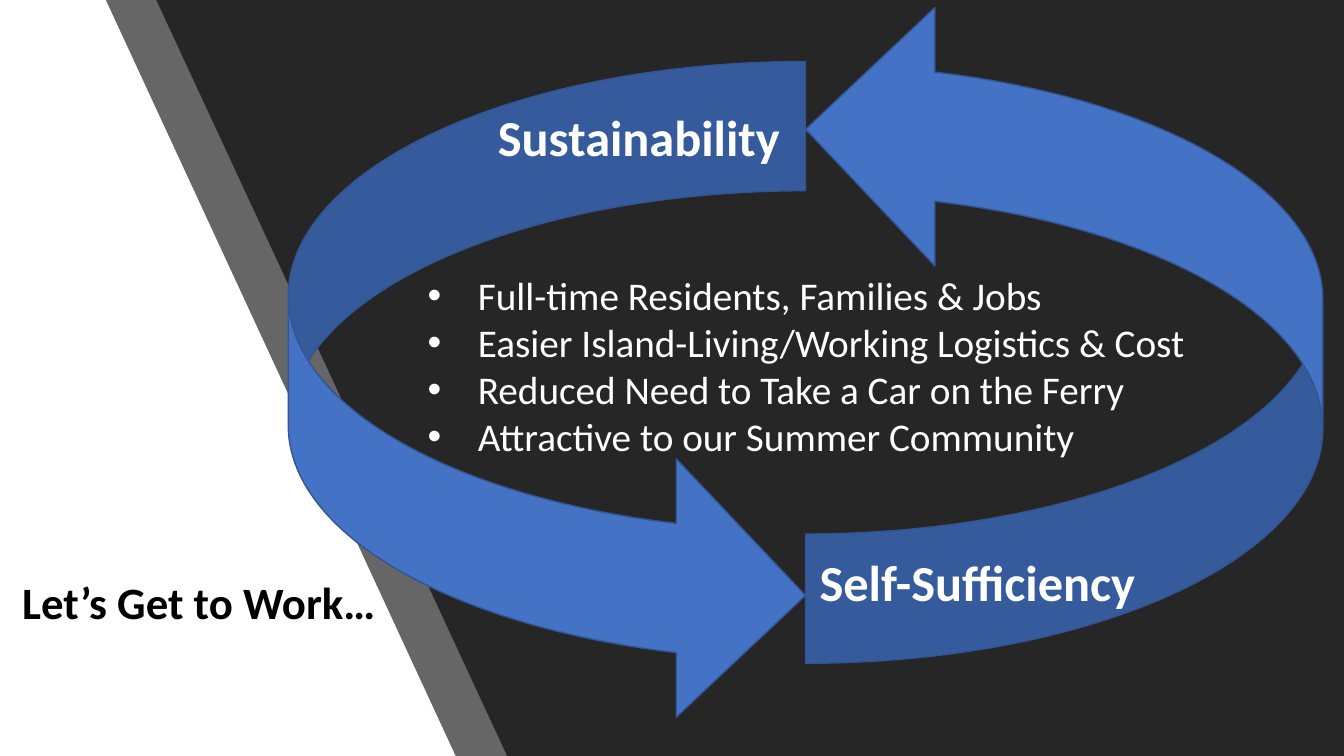
from lxml import etree
from pptx import Presentation
from pptx.dml.color import RGBColor
from pptx.enum.shapes import MSO_SHAPE
from pptx.enum.text import MSO_ANCHOR, MSO_AUTO_SIZE, PP_ALIGN
from pptx.oxml.ns import qn
from pptx.util import Inches, Pt

RECTANGLE = MSO_SHAPE.RECTANGLE
CURVED_ARROW = MSO_SHAPE.CURVED_RIGHT_ARROW
TOP = MSO_ANCHOR.TOP
LEFT = PP_ALIGN.LEFT
NO_AUTOFIT = MSO_AUTO_SIZE.NONE

WIDTH, HEIGHT = 13.33, 7.5
FONT = "Calibri"
BLACK, WHITE, DARK = "000000", "FFFFFF", "262626"
BLUE, BLUE_LINE = "4472C4", "325491"
BENEFITS = [
    "Full-time Residents, Families & Jobs",
    "Easier Island-Living/Working Logistics & Cost",
    "Reduced Need to Take a Car on the Ferry",
    "Attractive to our Summer Community",
]


def rgb(value):
    """Return the colour for a hex string."""
    return RGBColor.from_string(value)


def paint(sp, fill, line=None):
    """Give a shape a flat fill and an optional one-point outline."""
    sp.shadow.inherit = False
    sp.fill.solid()
    sp.fill.fore_color.rgb = rgb(fill)
    if line:
        sp.line.color.rgb = rgb(line)
        sp.line.width = Pt(1)
    else:
        sp.line.fill.background()


def place(sp, box):
    """Move a shape to a box of left, top, width and height in inches."""
    sp.left, sp.top, sp.width, sp.height = map(Inches, box)


def write(sp, lines, size, color, bold=False):
    """Fill a shape with left-aligned paragraphs in one style."""
    tf = sp.text_frame
    tf.text = "\n".join(lines)
    tf.word_wrap = True
    tf.auto_size = NO_AUTOFIT
    tf.vertical_anchor = TOP
    for p in tf.paragraphs:
        p.alignment = LEFT
        p.space_before = p.space_after = Pt(0)
        p.line_spacing = 1.0
        for r in p.runs:
            r.font.name = FONT
            r.font.size = Pt(size)
            r.font.bold = bold
            r.font.color.rgb = rgb(color)


def add_slanted_panel(s, top_left, bottom_left, alpha=100):
    """Add a dark panel with a slanted left edge, reaching the right side."""
    builder = s.shapes.build_freeform(Inches(WIDTH), Inches(HEIGHT))
    corners = [(bottom_left, HEIGHT), (top_left, 0), (WIDTH, 0)]
    builder.add_line_segments([(Inches(x), Inches(y)) for x, y in corners])
    sp = builder.convert_to_shape()
    paint(sp, DARK)
    if alpha < 100:
        color = sp.fill._xPr.find(".//" + qn("a:srgbClr"))
        etree.SubElement(color, qn("a:alpha"), val=str(alpha * 1000))


def add_backdrop(s, box):
    """Add the white page and the two slanted panels."""
    s.background.fill.solid()
    s.background.fill.fore_color.rgb = rgb(BLACK)
    paint(s.shapes.add_shape(RECTANGLE, *map(Inches, box)), WHITE)
    add_slanted_panel(s, 1.05, 4.52, alpha=70)
    add_slanted_panel(s, 1.55, 5.03)


def add_cycle(s, box):
    """Add two facing curved arrows and their labels within a box."""
    left, top, width, height = box
    arrow_w, arrow_h = width / 2, 6.58
    arrows = [(left, top + height - arrow_h, 0), (left + arrow_w, top, 180)]
    for x, y, rotation in arrows:
        sp = s.shapes.add_shape(CURVED_ARROW, *map(Inches, (x, y, arrow_w, arrow_h)))
        sp.rotation = rotation
        paint(sp, BLUE, BLUE_LINE)
    labels = [("Sustainability", 1.98, 1, 3.34), ("Self-Sufficiency", 5.17, 5.42, 4.25)]
    for text, dx, dy, w in labels:
        sp = s.shapes.add_textbox(*map(Inches, (left + dx, top + dy, w, 0.71)))
        write(sp, [text], 36, WHITE, bold=True)


def set_title(s, box):
    """Place the title in front of the backdrop."""
    sp = s.shapes.title
    place(sp, box)
    write(sp, ["Let’s Get to Work…"], 32, BLACK, bold=True)
    s.shapes._spTree.append(sp._element)


def set_benefits(s, box):
    """Place the bulleted list in front of the arrows."""
    sp = s.placeholders[1]
    place(sp, box)
    write(sp, BENEFITS, 28, WHITE)
    for p in sp.text_frame.paragraphs:
        pPr = p._p.get_or_add_pPr()
        pPr.set("marL", str(Inches(0.5)))
        pPr.set("indent", str(Inches(-0.5)))
        etree.SubElement(pPr, qn("a:buFont"), typeface="Arial")
        etree.SubElement(pPr, qn("a:buChar"), char="•")
    s.shapes._spTree.append(sp._element)


def main():
    """Build and save the slide."""
    prs = Presentation()
    prs.slide_width, prs.slide_height = Inches(WIDTH), Inches(HEIGHT)
    s = prs.slides.add_slide(prs.slide_layouts[1])
    add_backdrop(s, (0, 0, WIDTH, HEIGHT))
    set_title(s, (0.12, 5.65, 3.91, 0.64))
    add_cycle(s, (2.86, 0, 10.26, 7.19))
    set_benefits(s, (4.14, 2.64, 7.98, 1.99))
    prs.save("out.pptx")


if __name__ == "__main__":
    main()
